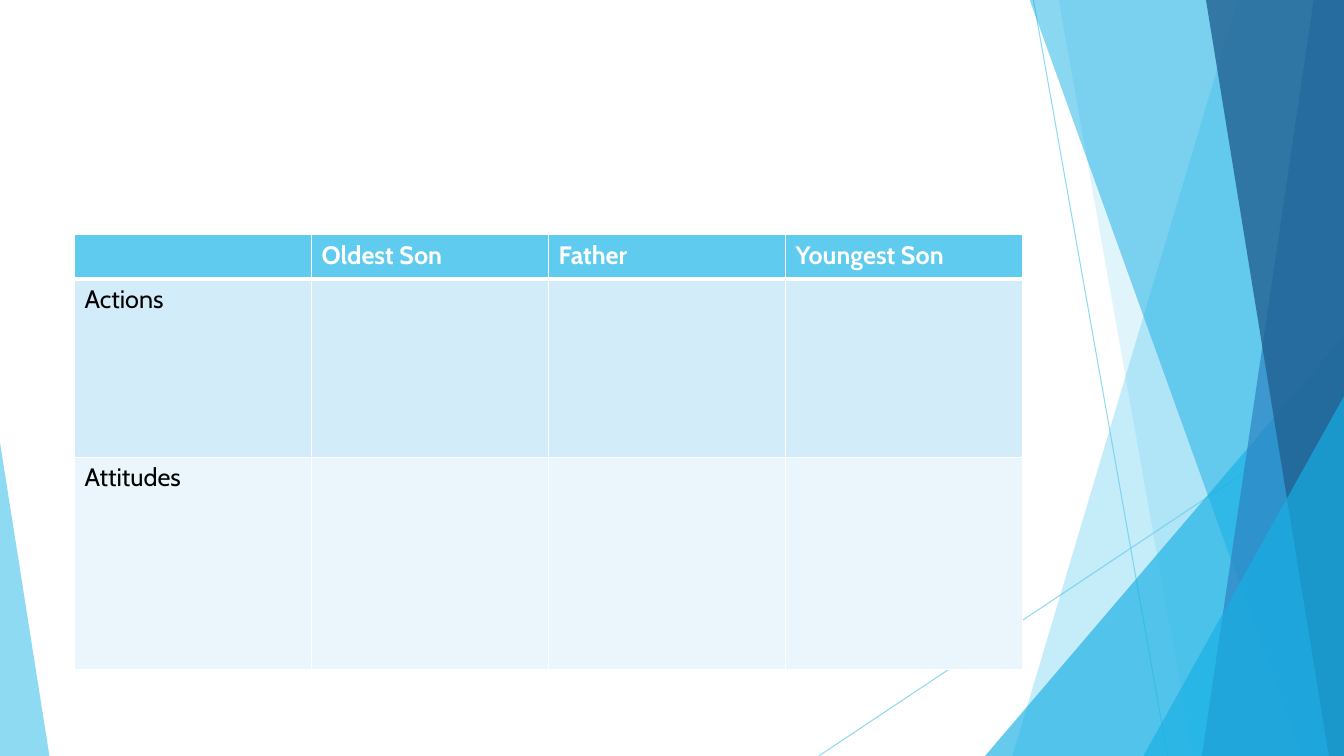
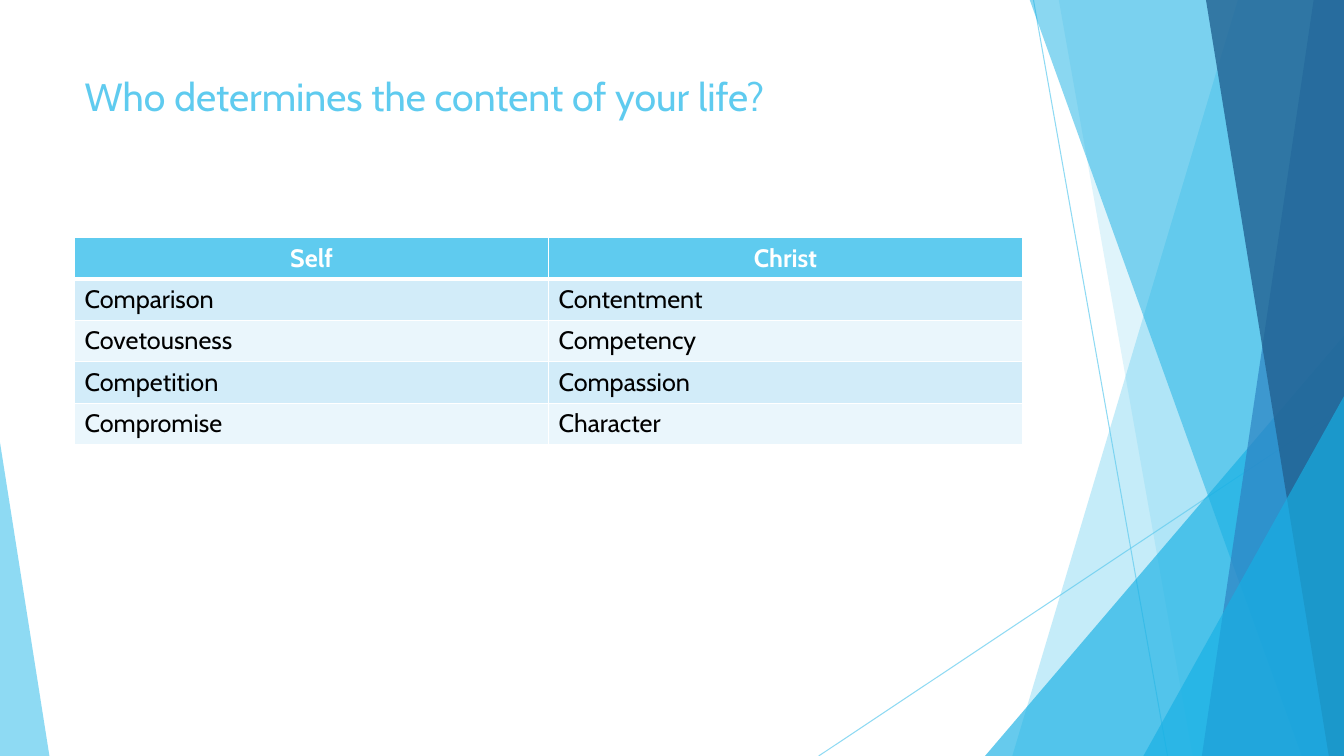
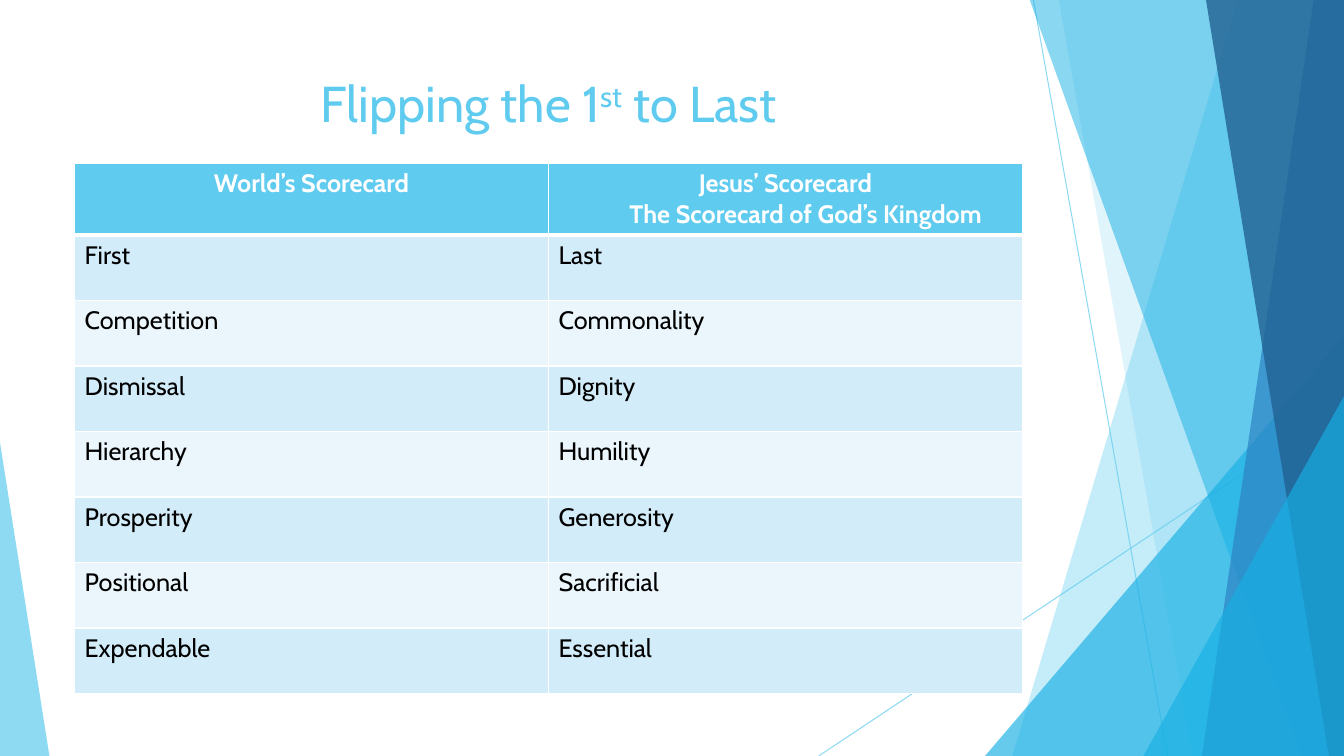
from pptx import Presentation
from pptx.dml.color import RGBColor
from pptx.enum.shapes import MSO_CONNECTOR, MSO_SHAPE
from pptx.enum.text import MSO_ANCHOR, MSO_AUTO_SIZE, PP_ALIGN
from pptx.oxml.ns import qn
from pptx.util import Inches, Pt
from lxml.etree import SubElement

FONT = "Cabin"
SKY = "5FCBEF"
AZURE = "17B0E4"
BLUE = "2E83C3"
NAVY = "226292"
WHITE = "FFFFFF"
BLACK = "000000"
ROW_TINTS = ["D2ECF9", "EAF6FC"]
WIDTH, HEIGHT = 13.33, 7.5
LEFT, CONTENT_WIDTH = 0.74, 9.4


def rgb(color):
    return RGBColor.from_string(color)


def set_opacity(shape, percent):
    color = shape.element.xpath("./p:spPr//a:srgbClr")[0]
    SubElement(color, qn("a:alpha")).set("val", str(percent * 1000))


def paint(shape, color, opacity):
    shape.shadow.inherit = False
    shape.fill.solid()
    shape.fill.fore_color.rgb = rgb(color)
    shape.line.fill.background()
    set_opacity(shape, opacity)


def add_ray(slide, *ends):
    ray = slide.shapes.add_connector(MSO_CONNECTOR.STRAIGHT, *map(Inches, ends))
    ray.line.color.rgb = rgb(SKY)
    ray.line.width = Pt(0.75)
    set_opacity(ray, 70)
    SubElement(ray.element.spPr, qn("a:effectLst"))


def add_ribbon(slide, top_left, bottom_left, color, opacity):
    top = -0.01
    start, *corners = [
        (Inches(x), Inches(y))
        for x, y in [(top_left, top), (WIDTH, top), (WIDTH, HEIGHT), (bottom_left, HEIGHT)]
    ]
    outline = slide.shapes.build_freeform(*start)
    outline.add_line_segments(corners)
    paint(outline.convert_to_shape(), color, opacity)


def add_corner(slide, left, top, width, apex, color, opacity):
    corner = slide.shapes.add_shape(
        MSO_SHAPE.ISOSCELES_TRIANGLE,
        Inches(left), Inches(top), Inches(width), Inches(HEIGHT - top),
    )
    corner.adjustments[0] = apex
    paint(corner, color, opacity)


def draw_backdrop(slide):
    add_ray(slide, 10.25, 0, 11.58, HEIGHT)
    add_ray(slide, WIDTH, 4.03, 8.12, HEIGHT)
    add_ribbon(slide, 12.28, 10.04, SKY, 36)
    add_ribbon(slide, 10.5, 11.83, SKY, 20)
    add_corner(slide, 9.77, 3.33, 3.56, 1, AZURE, 66)
    add_ribbon(slide, 10.21, 12.91, AZURE, 50)
    add_ribbon(slide, 13.03, 11.92, BLUE, 70)
    add_ribbon(slide, 11.96, 13.18, NAVY, 80)
    add_corner(slide, 11.34, 3.93, 1.99, 1, AZURE, 66)
    add_corner(slide, 0, 4.39, 0.49, 0, SKY, 70)


def move_to_master(slide, master):
    for number, shape in enumerate(list(slide.shapes), 100):
        shape.element.xpath("./*[1]/p:cNvPr")[0].set("id", str(number))
        master.shapes.element.append(shape.element)


def set_title(slide, parts, size, height, align=PP_ALIGN.LEFT):
    title = slide.shapes.title
    title.left, title.top = Inches(LEFT), Inches(0.67)
    title.width, title.height = Inches(CONTENT_WIDTH), Inches(height)
    frame = title.text_frame
    frame.word_wrap = True
    frame.auto_size = MSO_AUTO_SIZE.NONE
    frame.vertical_anchor = MSO_ANCHOR.TOP
    heading = frame.paragraphs[0]
    heading.alignment = align
    for text, raised in parts:
        run = heading.add_run()
        run.text = text
        if raised:
            run.font._element.set("baseline", "30000")
    style_text(heading, size, SKY)


def style_text(paragraph, size, color, bold=False):
    paragraph.font.name = FONT
    paragraph.font.size = Pt(size)
    paragraph.font.bold = bold
    paragraph.font.color.rgb = rgb(color)


def set_borders(cell, row):
    widths = {
        "a:lnL": 1,
        "a:lnR": 1,
        "a:lnT": 3 if row == 1 else 1,
        "a:lnB": 3 if row == 0 else 1,
    }
    properties = cell._tc.get_or_add_tcPr()
    for side, width in widths.items():
        border = SubElement(properties, qn(side))
        border.set("w", str(Pt(width)))
        fill = SubElement(border, qn("a:solidFill"))
        SubElement(fill, qn("a:srgbClr")).set("val", WHITE)


def fill_cell(cell, text, row, header_align):
    set_borders(cell, row)
    cell.fill.solid()
    cell.fill.fore_color.rgb = rgb(ROW_TINTS[(row - 1) % 2] if row else SKY)
    cell.text = text
    for paragraph in cell.text_frame.paragraphs:
        paragraph.alignment = PP_ALIGN.LEFT if row else header_align
        style_text(paragraph, 18, BLACK if row else WHITE, bold=row == 0)


def add_comparison(slide, top, heights, rows, header_align=PP_ALIGN.CENTER):
    columns = len(rows[0])
    table = slide.shapes.add_table(
        len(rows), columns,
        Inches(LEFT), Inches(top), Inches(CONTENT_WIDTH), Inches(sum(heights)),
    ).table
    table.horz_banding = False
    for column in table.columns:
        column.width = Inches(CONTENT_WIDTH / columns)
    for row, (height, texts) in enumerate(zip(heights, rows)):
        table.rows[row].height = Inches(height)
        for column, text in enumerate(texts):
            fill_cell(table.cell(row, column), text, row, header_align)
    return table


def main():
    deck = Presentation()
    deck.slide_width, deck.slide_height = Inches(WIDTH), Inches(HEIGHT)
    title_only, blank = deck.slide_layouts[5], deck.slide_layouts[6]

    sons = deck.slides.add_slide(blank)
    draw_backdrop(sons)
    move_to_master(sons, deck.slide_master)
    add_comparison(sons, 2.33, [0.44, 1.77, 2.1], [
        ["", "Oldest Son", "Father", "Youngest Son"],
        ["Actions", "", "", ""],
        ["Attitudes", "", "", ""],
    ], PP_ALIGN.LEFT)

    life = deck.slides.add_slide(title_only)
    set_title(life, [("Who determines the content of your life?", False)], 28, 0.87)
    add_comparison(life, 2.36, [0.41] * 5, [
        ["Self", "Christ"],
        ["Comparison", "Contentment"],
        ["Covetousness", "Competency"],
        ["Competition", "Compassion"],
        ["Compromise", "Character"],
    ])

    flipping = deck.slides.add_slide(title_only)
    title_parts = [("Flipping the 1", False), ("st", True), (" to Last", False)]
    set_title(flipping, title_parts, 36, 0.9, PP_ALIGN.CENTER)
    scorecard = add_comparison(flipping, 1.62, [0.65] * 8, [
        ["World’s Scorecard", "Jesus’ Scorecard\nThe Scorecard of God’s Kingdom"],
        ["First", "Last"],
        ["Competition", "Commonality"],
        ["Dismissal", "Dignity"],
        ["Hierarchy", "Humility"],
        ["Prosperity", "Generosity"],
        ["Positional", "Sacrificial"],
        ["Expendable", "Essential"],
    ])
    kingdom = scorecard.cell(0, 1).text_frame.paragraphs[1]
    kingdom._p.get_or_add_pPr().set("marL", str(Inches(0.4)))

    deck.save("out.pptx")


if __name__ == "__main__":
    main()
